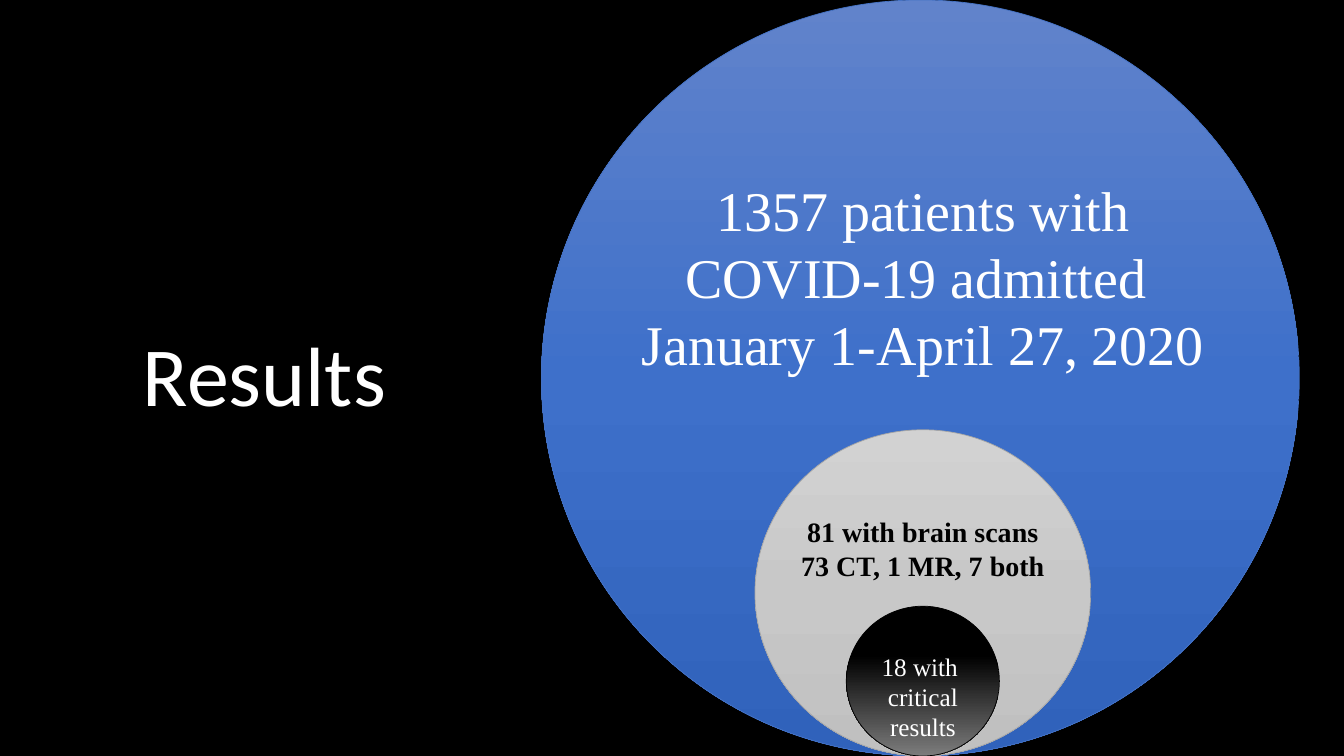
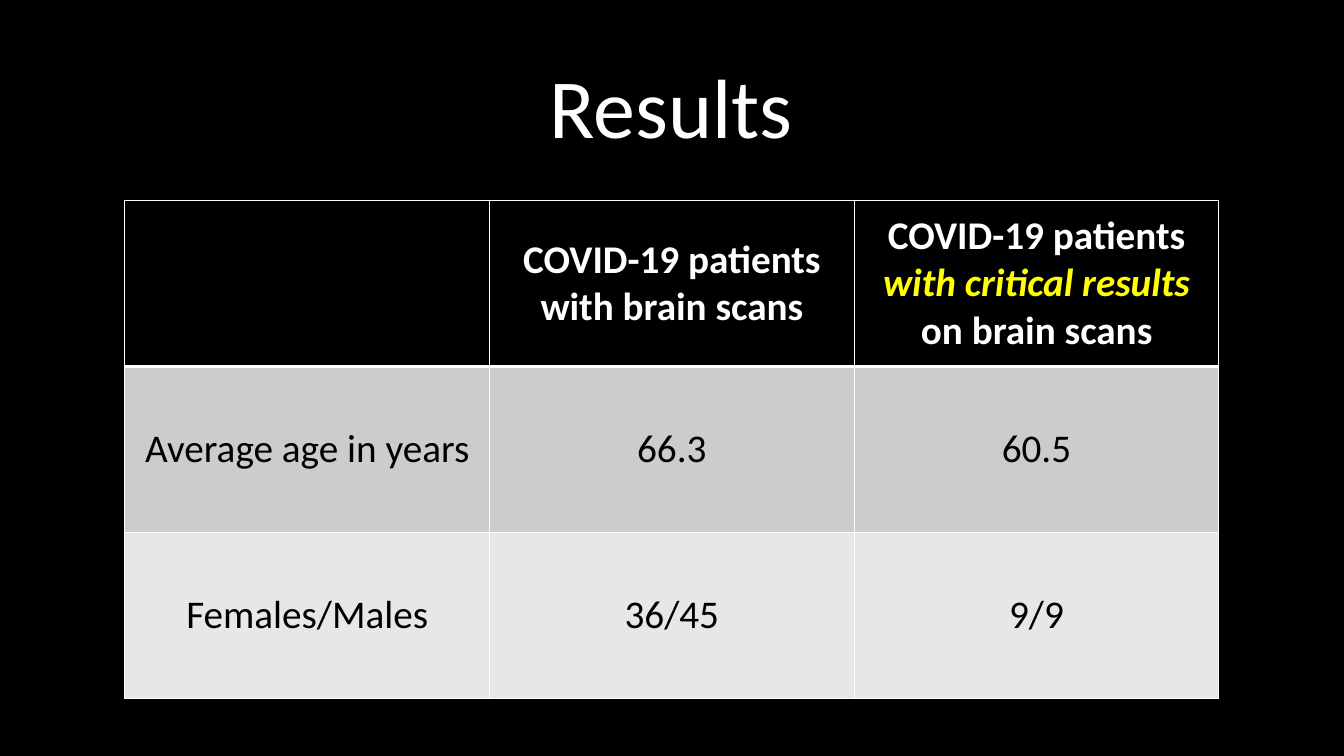
from dataclasses import dataclass

from lxml import etree
from pptx import Presentation
from pptx.dml.color import RGBColor
from pptx.enum.shapes import MSO_SHAPE
from pptx.enum.text import MSO_ANCHOR, PP_ALIGN
from pptx.oxml.ns import qn
from pptx.util import Pt

OVAL = MSO_SHAPE.OVAL
CENTER = PP_ALIGN.CENTER
TOP, MIDDLE = MSO_ANCHOR.TOP, MSO_ANCHOR.MIDDLE
BLANK_LAYOUT = 6


@dataclass(frozen=True)
class Theme:
    black: str = "000000"
    white: str = "FFFFFF"
    highlight: str = "FFFF00"
    bands: tuple = ("CCCCCC", "E7E7E7")
    sans: str = "Calibri"
    serif: str = "Times New Roman"
    title_size: float = 60
    table_size: float = 28
    outline: float = 0.5
    rule: float = 1
    header_rule: float = 3


THEME = Theme()
SLIDE_SIZE = (960, 540)

TITLE = "Results"
TITLE_BOXES = {"circles": (49.7, 215.3, 278.6, 111.6),
               "table": (65.5, 27.4, 828, 104.4)}

# Nested groups share an axis and rest on the slide's bottom edge.
GROUP_AXIS = 659.2
GROUPS = [
    dict(size=(541.4, 540), shift=-1.8, line="4472C4",
         stops=[(0, "6183CB"), (50, "3E70CA"), (100, "3062BB")],
         lines=["1357 patients with COVID-19 admitted ", "January 1-April 27, 2020"],
         text_top=121.7, text_size=(458.6, 200.9), font_size=40, bold=False, color=THEME.white),
    dict(size=(239.8, 233), shift=0, line="A5A5A5",
         stops=[(0, "D2D2D2"), (50, "C8C8C8"), (100, "C0C0C0")],
         lines=["81 with brain scans", "73 CT, 1 MR, 7 both"],
         text_top=364.3, text_size=(221, 55.4), font_size=20, bold=True, color=THEME.black),
    dict(size=(109.4, 107), shift=0, line=THEME.black,
         stops=[(33, THEME.black), (100, "7C7C7C")],
         lines=["18 with ", "critical results"],
         text_top=461.5, text_size=(106.6, 51.1), font_size=18, bold=False, color=THEME.white),
]

# Each cell is a list of (text, is highlighted) runs.
HEADER = [
    [],
    [("COVID-19 patients with brain scans", False)],
    [("COVID-19 patients ", False), ("with critical results", True), (" on brain scans", False)],
]
BODY = [("Average age in years", "66.3", "60.5"),
        ("Females/Males", "36/45", "9/9")]
TABLE_LEFT, TABLE_TOP = 89.2, 143.3
COLUMN_WIDTH, ROW_HEIGHT = 260.5, 118.6


def rgb(color):
    return RGBColor.from_string(color)


def points(*lengths):
    return [Pt(length) for length in lengths]


def style(paragraph, face, size, color, bold=False):
    paragraph.alignment = CENTER
    font = paragraph.font
    font.name, font.size, font.bold = face, Pt(size), bold
    font.color.rgb = rgb(color)


def add_text(slide, box, lines, face, size, color, bold=False, anchor=TOP, spacing=None):
    frame = slide.shapes.add_textbox(*points(*box)).text_frame
    frame.word_wrap = True
    frame.vertical_anchor = anchor
    frame.text = "\n".join(lines)
    for paragraph in frame.paragraphs:
        style(paragraph, face, size, color, bold)
        paragraph.line_spacing = spacing


def add_slide(deck, title_box):
    slide = deck.slides.add_slide(deck.slide_layouts[BLANK_LAYOUT])
    add_text(slide, title_box, [TITLE], THEME.sans, THEME.title_size, THEME.white,
             anchor=MIDDLE, spacing=0.9)
    return slide


def fill_downward(shape, stops):
    """Fill with a top-to-bottom gradient of (percent, colour) stops."""
    shape.fill.gradient()
    shape.fill.gradient_angle = 270
    stop_list = next(shape._element.spPr.iter(qn("a:gsLst")))
    for stop in list(stop_list):
        stop_list.remove(stop)
    for percent, color in stops:
        stop = etree.SubElement(stop_list, qn("a:gs"), pos=str(percent * 1000))
        etree.SubElement(stop, qn("a:srgbClr"), val=color)


def add_circle(slide, group):
    width, height = group["size"]
    left = GROUP_AXIS + group["shift"] - width / 2
    circle = slide.shapes.add_shape(
        OVAL, *points(left, SLIDE_SIZE[1] - height, width, height))
    circle.shadow.inherit = False
    fill_downward(circle, group["stops"])
    circle.line.color.rgb = rgb(group["line"])
    circle.line.width = Pt(THEME.outline)


def add_caption(slide, group):
    width, height = group["text_size"]
    add_text(slide, (GROUP_AXIS - width / 2, group["text_top"], width, height),
             group["lines"], THEME.serif, group["font_size"], group["color"], group["bold"])


def set_borders(cell, top, bottom):
    properties = cell._tc.get_or_add_tcPr()
    widths = {"a:lnL": THEME.rule, "a:lnR": THEME.rule, "a:lnT": top, "a:lnB": bottom}
    for position, (side, width) in enumerate(widths.items()):
        line = etree.Element(qn(side), w=str(Pt(width)))
        fill = etree.SubElement(line, qn("a:solidFill"))
        etree.SubElement(fill, qn("a:srgbClr"), val=THEME.white)
        properties.insert(position, line)


def fill_cell(cell, runs, background, color, bold):
    cell.fill.solid()
    cell.fill.fore_color.rgb = rgb(background)
    cell.vertical_anchor = MIDDLE
    paragraph = cell.text_frame.paragraphs[0]
    style(paragraph, THEME.sans, THEME.table_size, color, bold)
    for text, highlighted in runs:
        run = paragraph.add_run()
        run.text = text
        if highlighted:
            run.font.italic = True
            run.font.color.rgb = rgb(THEME.highlight)


def add_results_table(slide):
    rows = [HEADER] + [[[(value, False)] for value in row] for row in BODY]
    columns = len(HEADER)
    table = slide.shapes.add_table(
        len(rows), columns,
        *points(TABLE_LEFT, TABLE_TOP, columns * COLUMN_WIDTH, len(rows) * ROW_HEIGHT)).table
    table.first_row = table.horz_banding = False
    for column in table.columns:
        column.width = Pt(COLUMN_WIDTH)

    backgrounds = (THEME.black, *THEME.bands)
    for r, (row, background) in enumerate(zip(rows, backgrounds)):
        table.rows[r].height = Pt(ROW_HEIGHT)
        is_header = r == 0
        color = THEME.white if is_header else THEME.black
        top = THEME.header_rule if r == 1 else THEME.rule
        bottom = THEME.header_rule if is_header else THEME.rule
        for c, runs in enumerate(row):
            cell = table.cell(r, c)
            fill_cell(cell, runs, background, color, bold=is_header)
            set_borders(cell, top, bottom)


def main():
    deck = Presentation()
    deck.slide_width, deck.slide_height = points(*SLIDE_SIZE)
    background = deck.slide_master.background.fill
    background.solid()
    background.fore_color.rgb = rgb(THEME.black)

    circles_slide = add_slide(deck, TITLE_BOXES["circles"])
    for add_part in (add_circle, add_caption):
        for group in GROUPS:
            add_part(circles_slide, group)

    add_results_table(add_slide(deck, TITLE_BOXES["table"]))
    deck.save("out.pptx")


if __name__ == "__main__":
    main()
